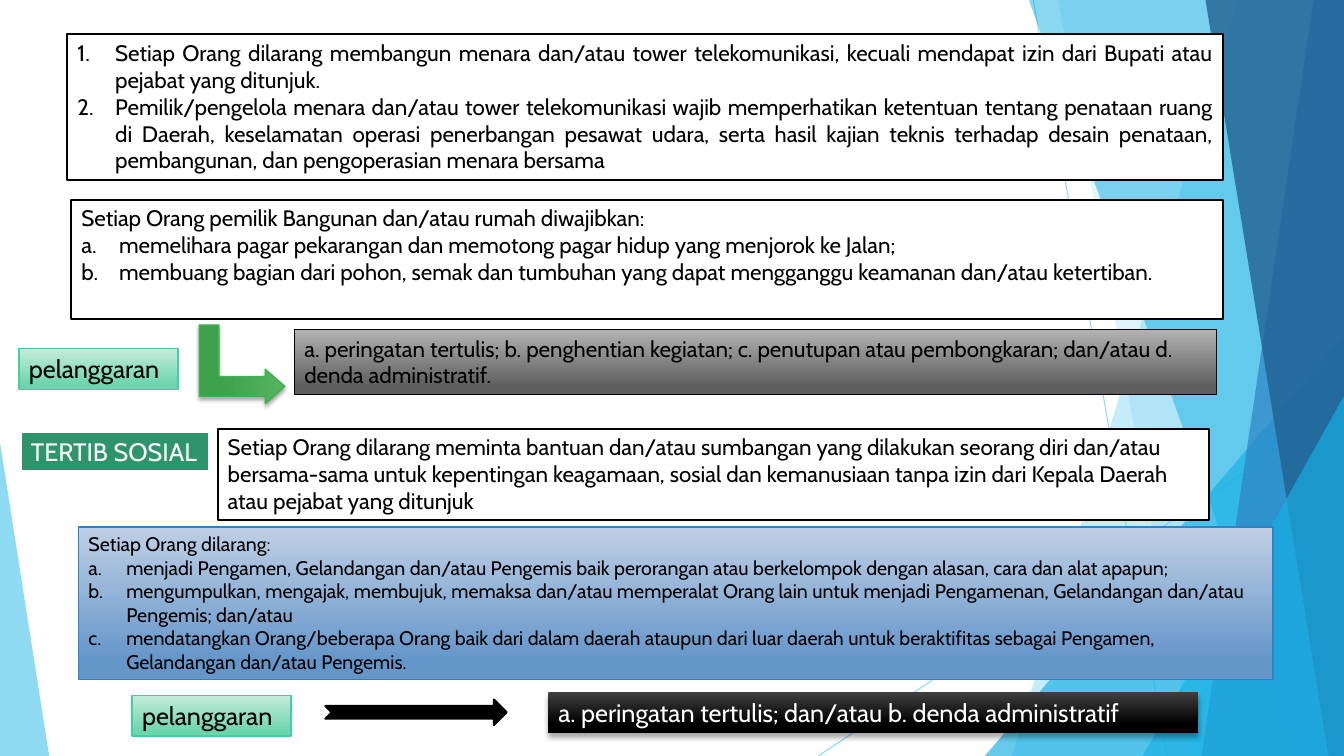
import pptx
import pptx.util
import pptx.dml.color
import pptx.enum.shapes
import pptx.enum.text
import pptx.oxml
import pptx.oxml.ns
import lxml.etree

Cm, Pt = pptx.util.Cm, pptx.util.Pt
SHAPE = pptx.enum.shapes.MSO_SHAPE
ALIGN = pptx.enum.text.PP_ALIGN
qn = pptx.oxml.ns.qn

# Content: list items are marked with the numbering scheme
NUM, ABC = "arabicPeriod", "alphaLcPeriod"
TOWER = [
    (NUM, "Setiap Orang dilarang membangun menara dan/atau tower telekomunikasi, kecuali mendapat izin dari Bupati atau pejabat yang ditunjuk."),
    (NUM, "Pemilik/pengelola menara dan/atau tower telekomunikasi wajib memperhatikan ketentuan tentang penataan ruang di Daerah, keselamatan operasi penerbangan pesawat udara, serta hasil kajian teknis terhadap desain penataan, pembangunan, dan pengoperasian menara bersama"),
]
BUILDING = [
    (None, "Setiap Orang pemilik Bangunan dan/atau rumah diwajibkan:"),
    (ABC, "memelihara pagar pekarangan dan memotong pagar hidup yang menjorok ke Jalan;"),
    (ABC, "membuang bagian dari pohon, semak dan tumbuhan yang dapat mengganggu keamanan dan/atau ketertiban."),
]
SANCTION_1 = [(None, "a. peringatan tertulis; b. penghentian kegiatan; c. penutupan atau pembongkaran; dan/atau d. denda administratif.")]
VIOLATION = [(None, "pelanggaran")]
SOCIAL = [(None, "TERTIB SOSIAL")]
DONATION = [(None, "Setiap Orang dilarang meminta bantuan dan/atau sumbangan yang dilakukan seorang diri dan/atau bersama-sama untuk kepentingan keagamaan, sosial dan kemanusiaan tanpa izin dari Kepala Daerah atau pejabat yang ditunjuk")]
BEGGING = [
    (None, "Setiap Orang dilarang:"),
    (ABC, "menjadi Pengamen, Gelandangan dan/atau Pengemis baik perorangan atau berkelompok dengan alasan, cara dan alat apapun;"),
    (ABC, "mengumpulkan, mengajak, membujuk, memaksa dan/atau memperalat Orang lain untuk menjadi Pengamenan, Gelandangan dan/atau Pengemis; dan/atau"),
    (ABC, "mendatangkan Orang/beberapa Orang baik dari dalam daerah ataupun dari luar daerah untuk beraktifitas sebagai Pengamen, Gelandangan dan/atau Pengemis."),
]
SANCTION_2 = [(None, "a. peringatan tertulis; dan/atau b. denda administratif")]

# Gradients: top colour, lower colour, position of the lower stop
GREY = ("B2B2B2", "5E5E5E", 0.88)
MINT = ("C5ECDB", "6DD5AE", 0.88)
BLUE = ("BFCFE5", "6596CA", 0.88)
GREEN = ("56B461", "3CA14A", 0.78)
BLACK = ("3F3F3F", "000000", 0.78)

# Boxes: place (cm), fill, line, text size, text colour, align, paragraphs
THIN = ("000000", 1.5)
BOXES = [
    ((1.7, 0.86, 29.13, 3.68), "FFFFFF", THIN, 16, "000000", ALIGN.JUSTIFY, TOWER),
    ((1.8, 5.03, 29.03, 3), "FFFFFF", THIN, 16, "000000", ALIGN.LEFT, BUILDING),
    ((7.42, 8.31, 23.24, 1.63), GREY, ("000000", 1), 16, "000000", ALIGN.LEFT, SANCTION_1),
    ((0.48, 8.79, 4.01, 1.02), MINT, ("42D0A2", 1), 18, "000000", ALIGN.LEFT, VIOLATION),
    ((0.53, 10.87, 4.75, 1.02), "2E946B", ("FFFFFF", 2), 18, "FFFFFF", ALIGN.JUSTIFY, SOCIAL),
    ((5.49, 10.8, 24.99, 2.31), "FFFFFF", THIN, 16, "000000", ALIGN.LEFT, DONATION),
    ((1.98, 13.28, 30.1, 3.84), BLUE, ("2E83C3", 1), 14, "000000", ALIGN.LEFT, BEGGING),
    ((13.82, 17.45, 16.38, 1.02), BLACK, None, 18, "FFFFFF", ALIGN.LEFT, SANCTION_2),
    ((3.33, 17.53, 4.01, 1.02), MINT, ("42D0A2", 1), 18, "000000", ALIGN.LEFT, VIOLATION),
]

# Background, back to front. Bands run to the right edge: top x, bottom x.
# Triangles: place and apex position.
W, H = 33.87, 19.05
RAYS = [(26.04, 0, 29.41, H), (W, 10.24, 20.62, H)]
FACETS = [
    ("band", (31.19, 25.5), "5FCBEF", 36),
    ("band", (26.67, 30.05), "5FCBEF", 20),
    ("triangle", (24.82, 8.46, 9.05, 10.59, 1), "17B0E4", 66),
    ("band", (25.93, 32.79), "17B0E4", 50),
    ("band", (33.1, 30.28), "2E83C3", 70),
    ("band", (30.38, 33.48), "226292", 80),
    ("triangle", (28.8, 9.98, 5.07, 9.07, 1), "17B0E4", 66),
    ("triangle", (0, 11.15, 1.24, 7.9, 0), "5FCBEF", 70),
]


def rgb(value):
    return pptx.dml.color.RGBColor.from_string(value)


def set_alpha(sp, percent):
    color = next(sp._element.spPr.iter(qn("a:srgbClr")))
    lxml.etree.SubElement(color, qn("a:alpha"), val=str(percent * 1000))


def paint(sp, fill, line=None):
    sp.shadow.inherit = False
    if isinstance(fill, str):
        sp.fill.solid()
        sp.fill.fore_color.rgb = rgb(fill)
    else:
        top, low, end = fill
        sp.fill.gradient()
        sp.fill.gradient_angle = 270
        for stop, color, pos in zip(sp.fill.gradient_stops, (top, low), (0, end)):
            stop.color.rgb = rgb(color)
            stop.position = pos
    if line:
        sp.line.color.rgb = rgb(line[0])
        sp.line.width = Pt(line[1])
    else:
        sp.line.fill.background()


def add_shadow(sp, blur, dist):
    effects = sp._element.spPr.find(qn("a:effectLst"))
    shadow = lxml.etree.SubElement(effects, qn("a:outerShdw"), blurRad=str(Pt(blur)),
                                   dist=str(Pt(dist)), dir="5400000", rotWithShape="0")
    color = lxml.etree.SubElement(shadow, qn("a:srgbClr"), val="000000")
    lxml.etree.SubElement(color, qn("a:alpha"), val="35000")


def add_preset(s, kind, place, fill, line=None):
    sp = s.shapes.add_shape(kind, *map(Cm, place))
    paint(sp, fill, line)
    return sp


def write(sp, paragraphs, size, color, align):
    tf = sp.text_frame
    tf.word_wrap = True
    tf.vertical_anchor = pptx.enum.text.MSO_ANCHOR.TOP
    for i, (numbering, text) in enumerate(paragraphs):
        p = tf.add_paragraph() if i else tf.paragraphs[0]
        p.alignment = align
        if numbering:
            pPr = p._p.get_or_add_pPr()
            pPr.set("marL", str(Pt(27)))
            pPr.set("indent", str(Pt(-27)))
            lxml.etree.SubElement(pPr, qn("a:buAutoNum"), type=numbering)
        r = p.add_run()
        r.text = text
        r.font.name = "Cabin"
        r.font.size = Pt(size)
        r.font.color.rgb = rgb(color)


def draw_background(s):
    for ray in RAYS:
        c = s.shapes.add_connector(pptx.enum.shapes.MSO_CONNECTOR.STRAIGHT, *map(Cm, ray))
        c.line.color.rgb = rgb("5FCBEF")
        c.line.width = Pt(0.75)
        set_alpha(c, 70)
        lxml.etree.SubElement(c._element.spPr, qn("a:effectLst"))
    for kind, place, color, alpha in FACETS:
        if kind == "band":
            top, bottom = place
            outline = s.shapes.build_freeform(Cm(top), 0)
            corners = [(W, 0), (W, H), (bottom, H)]
            outline.add_line_segments([(Cm(x), Cm(y)) for x, y in corners])
            sp = outline.convert_to_shape()
            paint(sp, color)
        else:
            sp = add_preset(s, SHAPE.ISOSCELES_TRIANGLE, place[:4], color)
            sp.adjustments[0] = place[4]
        set_alpha(sp, alpha)


def main():
    prs = pptx.Presentation()
    prs.slide_width, prs.slide_height = Cm(W), Cm(H)
    s = prs.slides.add_slide(prs.slide_layouts[6])
    draw_background(s)

    # Text boxes
    for place, fill, line, size, color, align, paragraphs in BOXES:
        sp = add_preset(s, SHAPE.RECTANGLE, place, fill, line)
        write(sp, paragraphs, size, color, align)
        if fill == BLACK:
            add_shadow(sp, 4, 3)

    # Arrows from violation to sanction
    bent = add_preset(s, SHAPE.BENT_UP_ARROW, (5.11, 8.1, 1.98, 2.16), GREEN, ("42B051", 1))
    bent.rotation = 90
    for i, value in enumerate((0.25, 0.218, 0.25)):
        bent.adjustments[i] = value
    add_shadow(bent, 3, 2)
    add_preset(s, SHAPE.NOTCHED_RIGHT_ARROW, (8.2, 17.63, 4.57, 0.64), "000000", THIN)

    prs.save("out.pptx")


if __name__ == "__main__":
    main()
